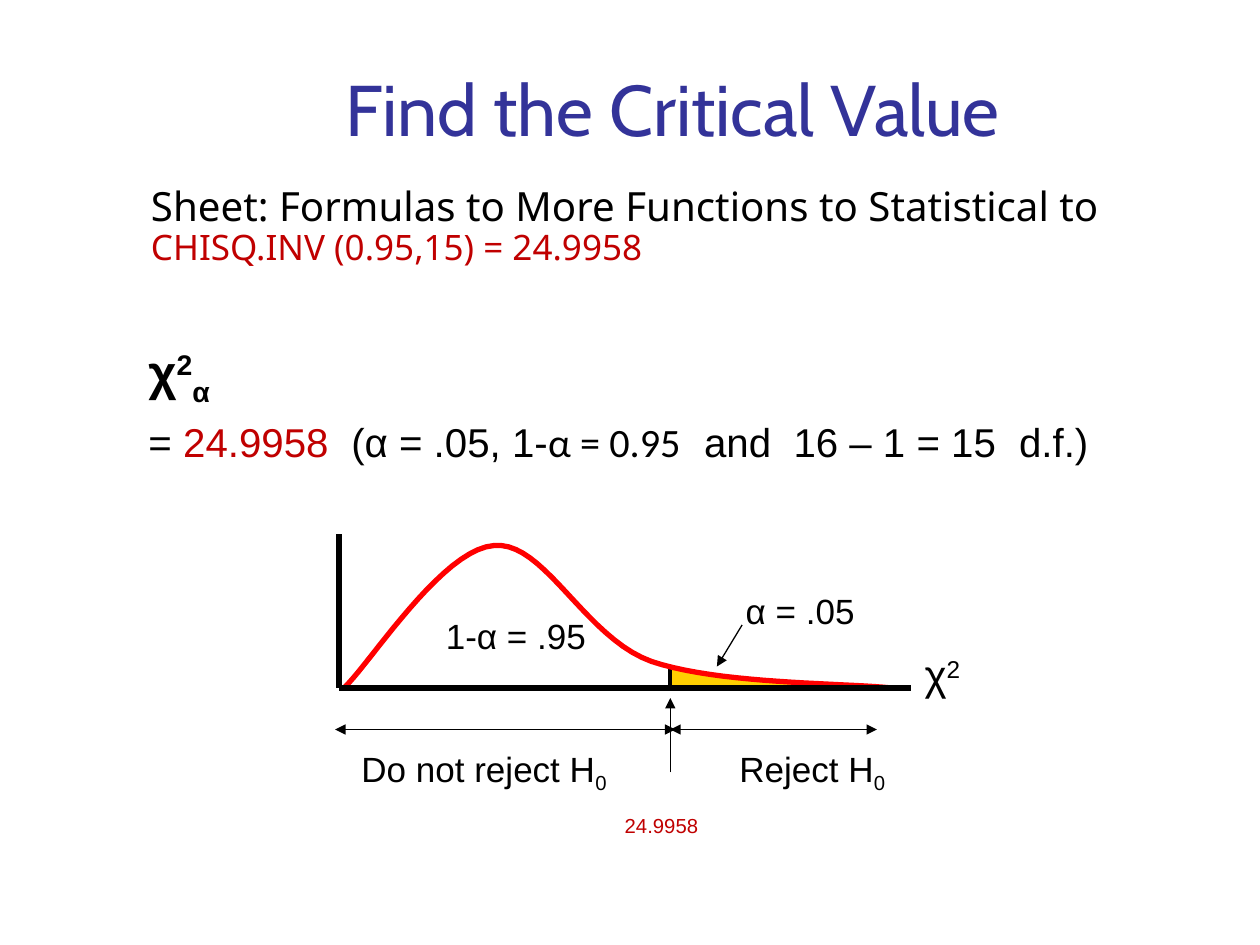
from dataclasses import dataclass

from lxml import etree
from pptx import Presentation
from pptx.dml.color import RGBColor
from pptx.enum.shapes import MSO_CONNECTOR
from pptx.enum.text import MSO_ANCHOR, PP_ALIGN
from pptx.oxml.ns import qn
from pptx.util import Emu, Inches, Pt

STRAIGHT = MSO_CONNECTOR.STRAIGHT
BOTTOM, TOP = MSO_ANCHOR.BOTTOM, MSO_ANCHOR.TOP
CENTER, LEFT = PP_ALIGN.CENTER, PP_ALIGN.LEFT
BLACK = RGBColor(0x00, 0x00, 0x00)
INDIGO = RGBColor(0x33, 0x33, 0x99)
CRIMSON = RGBColor(0xC0, 0x00, 0x00)
RED = RGBColor(0xFF, 0x00, 0x00)
GOLD = RGBColor(0xFF, 0xCF, 0x01)

SLIDE_WIDTH, SLIDE_HEIGHT = Inches(10), Inches(7.5)
COLUMN, ROW = SLIDE_WIDTH / 100, SLIDE_HEIGHT / 75
CRITICAL, AXIS, ORIGIN, RANGE = 53.2, 54.6, 26.9, 57.9
SUBSCRIPT, SUPERSCRIPT = -25, 30
CURVE_STEPS = 20

Point = tuple[float, float]


@dataclass
class Span:
    text: str
    size: float = 20
    name: str = "Arial"
    color: RGBColor = BLACK
    bold: bool = False
    baseline: int = 0


@dataclass
class Label:
    left: float
    top: float
    width: float
    height: float
    spans: list[Span]
    align: PP_ALIGN = LEFT
    anchor: MSO_ANCHOR = TOP
    line_spacing: float = 1.0
    tab_stops: tuple[float, ...] = ()


@dataclass
class Line:
    start: Point
    end: Point
    width: float = 0.75
    arrows: tuple[str, ...] = ()


LABELS = [
    Label(10.8, 4.2, 85.2, 8.3, [Span("Find the Critical Value", 41, "Cabin", INDIGO)],
          CENTER, BOTTOM),
    Label(11, 14.3, 80, 12.8, [
        Span("Sheet: Formulas to More Functions to Statistical to ", 23, "Noto Sans"),
        Span("CHISQ.INV (0.95,15) = 24.9958", 20, "Noto Sans", CRIMSON)], line_spacing=0.9),
    Label(27.7, 58.8, 22.5, 4.3, [Span("Do not reject H"), Span("0", baseline=SUBSCRIPT)]),
    Label(57.7, 58.8, 15, 4.3, [Span("Reject H"), Span("0", baseline=SUBSCRIPT)]),
    Label(58.2, 46.3, 11.4, 4.3, [Span("α = .05")]),
    Label(72.4, 51, 7.5, 5, [Span("χ", 24), Span("2", 24, baseline=SUPERSCRIPT)]),
    Label(10.8, 26.6, 8.3, 5.7, [
        Span("χ", 28, bold=True), Span("2", 28, bold=True, baseline=SUPERSCRIPT),
        Span("α", 28, bold=True, baseline=SUBSCRIPT)]),
    Label(10.8, 32.6, 78.3, 5.8, [
        Span("= ", 23), Span("24.9958", 23, color=CRIMSON), Span("\t(α = .05, 1-", 23),
        Span("α = 0.95", 23, "Calibri"), Span("\tand\t16 – 1 = 15\td.f.)", 23)],
        tab_stops=(16.1, 44.1, 51.2, 69.1)),
    Label(34.4, 48.3, 14.7, 4.4, [Span("1-α = .95")]),
    Label(48.6, 62.2, 10.3, 3.3, [Span("24.9958", color=CRIMSON, baseline=SUBSCRIPT)]),
]

CUTOFF = Line((CRITICAL, AXIS), (CRITICAL, 52.9), 2.25)
LINES = [
    Line((ORIGIN, AXIS), (72.3, AXIS), 3),
    Line((ORIGIN, AXIS), (ORIGIN, 42.4), 3),
    Line((58.9, 49.6), (56.9, 52.9), arrows=("tailEnd",)),
    Line((CRITICAL, RANGE), (69.6, RANGE), arrows=("headEnd", "tailEnd")),
    Line((53.6, RANGE), (26.6, RANGE), arrows=("headEnd", "tailEnd")),
    Line((CRITICAL, 61.3), (CRITICAL, 55.4), arrows=("tailEnd",)),
]

TAIL_AREA = [(CRITICAL, 54.5), (CRITICAL, 52.9), (54.4, 53.2), (55.7, 53.5), (56.8, 53.6),
             (58.3, 53.9), (60.7, 54.1), (63.4, 54.2), (68.1, 54.5), (68.2, 54.7)]
DENSITY = [(27.4, 54.5), (29.4, 52.6), (35.1, 43.6), (39.2, 43.3), (43.2, 42.9),
           (46.4, 50.6), (51.7, 52.5), (57, 54.3), (66.8, 54.2), (70.7, 54.6)]


def place(point: Point) -> tuple[Emu, Emu]:
    return Emu(round(point[0] * COLUMN)), Emu(round(point[1] * ROW))


def bezier(controls: list[Point], share: float) -> Point:
    rest = 1 - share
    weights = (rest ** 3, 3 * rest ** 2 * share, 3 * rest * share ** 2, share ** 3)
    x, y = (sum(w * c for w, c in zip(weights, axis)) for axis in zip(*controls))
    return x, y


def smooth_points(controls: list[Point]) -> list[Point]:
    return [controls[0]] + [
        bezier(controls[first:first + 4], step / CURVE_STEPS)
        for first in range(0, len(controls) - 1, 3)
        for step in range(1, CURVE_STEPS + 1)]


def add_outline(page, points: list[Point], close: bool):
    start, *others = map(place, points)
    builder = page.shapes.build_freeform(*start)
    builder.add_line_segments(others, close=close)
    outline = builder.convert_to_shape()
    outline.shadow.inherit = False
    return outline


def add_line(page, line: Line) -> None:
    connector = page.shapes.add_connector(STRAIGHT, *place(line.start), *place(line.end))
    connector.line.color.rgb = BLACK
    connector.line.width = Pt(line.width)
    stroke = connector.line._get_or_add_ln()
    for arrow in line.arrows:
        etree.SubElement(stroke, qn(f"a:{arrow}"), type="triangle")
    etree.SubElement(connector._element.spPr, qn("a:effectLst"))


def add_label(page, label: Label) -> None:
    box = page.shapes.add_textbox(*place((label.left, label.top)),
                                  *place((label.width, label.height)))
    frame = box.text_frame
    frame.word_wrap = True
    frame.vertical_anchor = label.anchor
    para = frame.paragraphs[0]
    para_format = {"alignment": label.align, "line_spacing": label.line_spacing}
    for attribute, value in para_format.items():
        setattr(para, attribute, value)
    if label.tab_stops:
        tabs = etree.SubElement(para._p.get_or_add_pPr(), qn("a:tabLst"))
        for stop in label.tab_stops:
            etree.SubElement(tabs, qn("a:tab"), pos=str(round(stop * COLUMN)), algn="l")
    for span in label.spans:
        run = para.add_run()
        run.text = span.text
        font_format = {"size": Pt(span.size), "name": span.name, "bold": span.bold}
        for attribute, value in font_format.items():
            setattr(run.font, attribute, value)
        run.font.color.rgb = span.color
        if span.baseline:
            run._r.get_or_add_rPr().set("baseline", str(span.baseline * 1000))


def main() -> None:
    deck = Presentation()
    deck.slide_width, deck.slide_height = SLIDE_WIDTH, SLIDE_HEIGHT
    page = deck.slides.add_slide(deck.slide_layouts[6])

    tail_area = add_outline(page, TAIL_AREA, True)
    tail_area.fill.solid()
    tail_area.fill.fore_color.rgb = GOLD
    tail_area.line.fill.background()
    add_line(page, CUTOFF)

    density = add_outline(page, smooth_points(DENSITY), False)
    density.fill.background()
    density.line.color.rgb = RED
    density.line.width = Pt(3)

    for line in LINES:
        add_line(page, line)
    for label in LABELS:
        add_label(page, label)
    deck.save("out.pptx")


if __name__ == "__main__":
    main()
